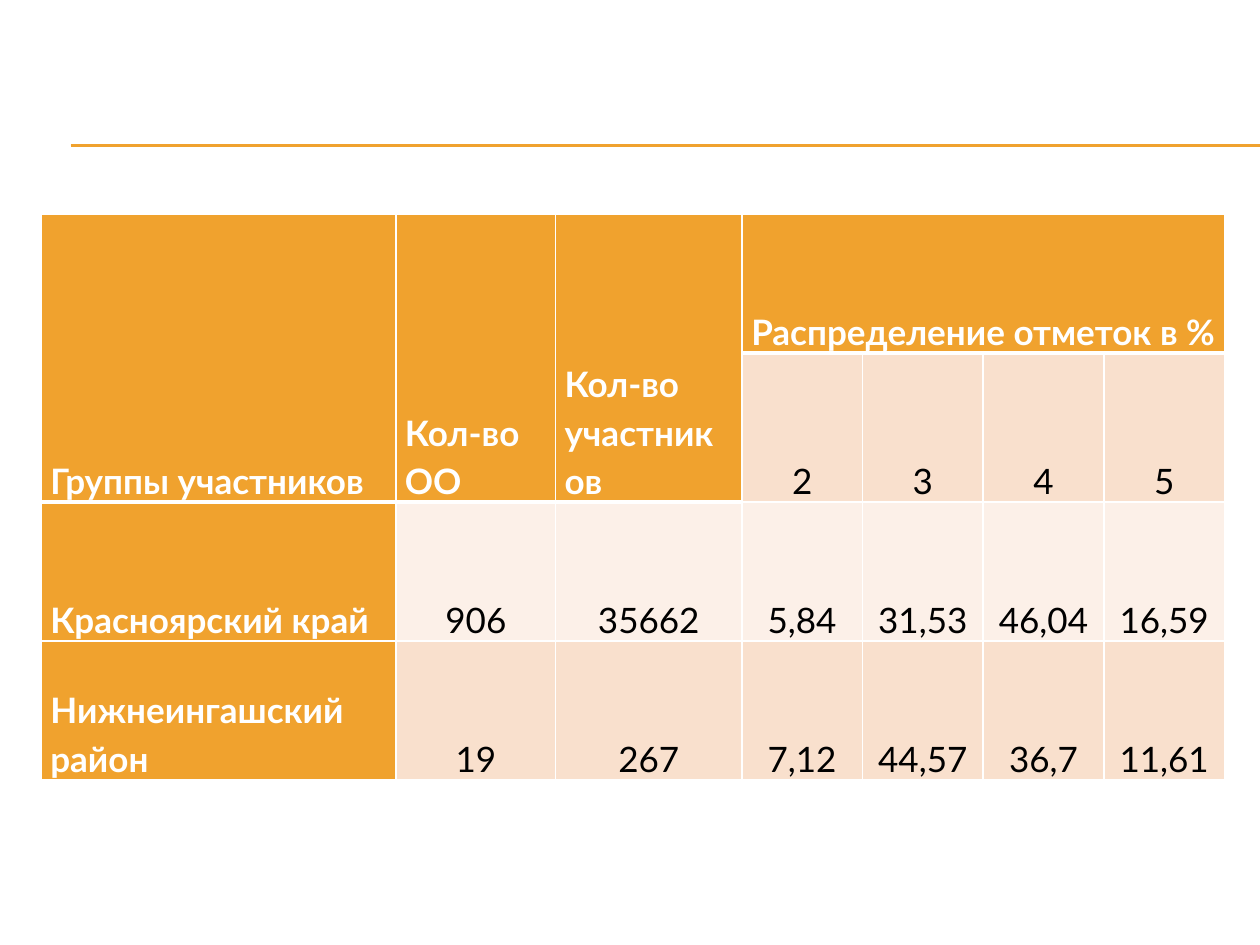
from lxml import etree
from pptx import Presentation
from pptx.dml.color import RGBColor
from pptx.enum import shapes, text
from pptx.oxml import ns
from pptx.util import Inches, Pt

ORANGE, WHITE, BLACK = "F0A22E", "FFFFFF", "000000"
BAND_DARK, BAND_LIGHT = "F9E0CD", "FCF0E8"

COLUMN_WIDTHS = [2.82, 1.27, 1.48] + [0.96] * 4
ROW_HEIGHTS = [1.1, 1.18, 1.1, 1.1]
ROWS = [
    ["Группы участников", "Кол-во ОО", "Кол-во участников",
     "Распределение отметок в %", "", "", ""],
    ["", "", "", "2", "3", "4", "5"],
    ["Красноярский край", "906", "35662", "5,84", "31,53", "46,04", "16,59"],
    ["Нижнеингашский район", "19", "267", "7,12", "44,57", "36,7", "11,61"],
]
GRADES_COLUMN = 3


def color(value):
    return RGBColor.from_string(value)


def add_rule(slide, left, top, width):
    rule = slide.shapes.add_connector(
        shapes.MSO_CONNECTOR.STRAIGHT, left, top, left + width, top)
    rule.line.color.rgb = color(ORANGE)
    rule.line.width = Pt(0.75)
    etree.SubElement(rule._element.spPr, ns.qn("a:effectLst"))


def set_borders(cell, widths):
    """Draw white borders; widths maps a side (L, R, T, B) to points."""
    properties = cell._tc.get_or_add_tcPr()
    for side, width in widths.items():
        border = etree.SubElement(properties, ns.qn(f"a:ln{side}"), w=str(Pt(width)))
        fill = etree.SubElement(border, ns.qn("a:solidFill"))
        etree.SubElement(fill, ns.qn("a:srgbClr"), val=WHITE)


def style_cell(cell, wording, fill, is_heading, centered):
    cell.fill.solid()
    cell.fill.fore_color.rgb = color(fill)
    cell.vertical_anchor = text.MSO_ANCHOR.BOTTOM
    cell.margin_left = cell.margin_right = Inches(0.07)
    cell.margin_top = cell.margin_bottom = 0
    cell.text = wording
    para = cell.text_frame.paragraphs[0]
    para.alignment = text.PP_ALIGN.CENTER if centered else text.PP_ALIGN.LEFT
    para.line_spacing = 1.15
    para.space_after = Pt(10)
    para.font.name = "Lato"
    para.font.size = Pt(20)
    para.font.bold = is_heading
    para.font.color.rgb = color(WHITE if is_heading else BLACK)


def add_results_table(slide, left, top, width, height):
    table = slide.shapes.add_table(
        len(ROWS), len(COLUMN_WIDTHS), left, top, width, height).table
    for column, share in zip(table.columns, COLUMN_WIDTHS):
        column.width = int(width * share / sum(COLUMN_WIDTHS))
    for row, share in zip(table.rows, ROW_HEIGHTS):
        row.height = int(height * share / sum(ROW_HEIGHTS))

    for r, row in enumerate(ROWS):
        for c, wording in enumerate(row):
            cell = table.cell(r, c)
            in_header = r == 0 or (r == 1 and c < GRADES_COLUMN)
            is_heading = in_header or c == 0
            borders = {"L": 1, "R": 1}
            if r == 0:
                borders["T"] = 1
            borders["B"] = 3 if in_header else 1
            set_borders(cell, borders)
            band = BAND_DARK if r % 2 else BAND_LIGHT
            style_cell(cell, wording, ORANGE if is_heading else band, is_heading,
                       centered=not is_heading or c >= GRADES_COLUMN)

    for c in range(GRADES_COLUMN):
        table.cell(0, c).merge(table.cell(1, c))
    table.cell(0, GRADES_COLUMN).merge(table.cell(0, len(COLUMN_WIDTHS) - 1))


def main():
    deck = Presentation()
    deck.slide_width, deck.slide_height = Inches(10), Inches(7.5)
    page = deck.slides.add_slide(deck.slide_layouts[6])
    for top in (1.15, 1.16):
        add_rule(page, Inches(0.56), Inches(top), Inches(9.44))
    add_results_table(page, Inches(0.33), Inches(1.7), Inches(9.39), Inches(4.49))
    deck.save("out.pptx")


if __name__ == "__main__":
    main()
